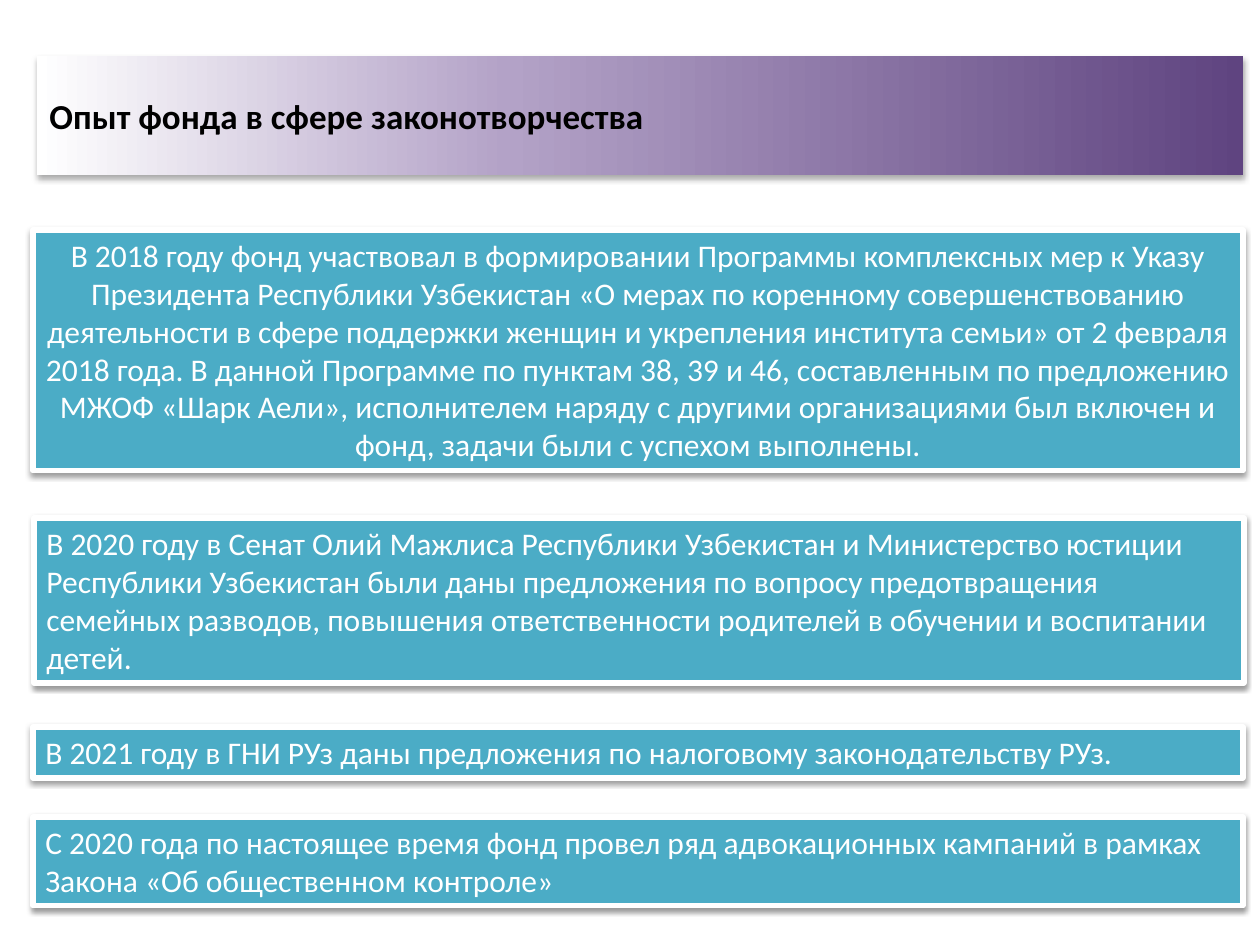
from dataclasses import dataclass

from lxml import etree
from pptx import Presentation
from pptx import util as u
from pptx.dml.color import RGBColor
from pptx.enum import shapes, text
from pptx.oxml import ns


@dataclass(frozen=True)
class Theme:
    font: str = "Calibri"
    title_size: int = 20
    body_size: int = 18
    ink: str = "000000"
    paper: str = "FFFFFF"
    panel: str = "4BACC6"
    banner: tuple = ((0, "5F4480"), (61, "B3A2C7"), (100, "FFFFFF"))
    border: int = 3
    # Shadows: opacity in percent, blur and distance in points
    banner_shadow: tuple = (32, 3.5, 2.2)
    panel_shadow: tuple = (38, 3.1, 1.6)


THEME = Theme()
PX = u.Inches(1) // 126
LEFT, ALIGN = text.PP_ALIGN.LEFT, text.PP_ALIGN

TITLE = "Опыт фонда в сфере законотворчества"
TITLE_AT = (37, 56, 1206, 119)

PANEL_WIDTH = 1210
# left, top, height, alignment, wording
PANELS = [
    (33, 230, 241, ALIGN.CENTER,
     "В 2018 году фонд участвовал в формировании Программы комплексных мер к Указу "
     "Президента Республики Узбекистан «О мерах по коренному совершенствованию "
     "деятельности в сфере поддержки женщин и укрепления института семьи» от 2 февраля "
     "2018 года. В данной Программе по пунктам 38, 39 и 46, составленным по предложению "
     "МЖОФ «Шарк Аели», исполнителем наряду с другими организациями был включен и "
     "фонд, задачи были с успехом выполнены."),
    (34, 518, 165, LEFT,
     "В 2020 году в Сенат Олий Мажлиса Республики Узбекистан и Министерство юстиции "
     "Республики Узбекистан были даны предложения по вопросу предотвращения "
     "семейных разводов, повышения ответственности родителей в обучении и воспитании "
     "детей."),
    (33, 727, 51, LEFT,
     "В 2021 году в ГНИ РУз даны предложения по налоговому законодательству РУз."),
    (33, 817, 89, LEFT,
     "С 2020 года по настоящее время фонд провел ряд адвокационных кампаний в рамках "
     "Закона «Об общественном контроле»"),
]


def rgb(value):
    return RGBColor.from_string(value)


def add_element(parent, tag, **attributes):
    values = {name: str(value) for name, value in attributes.items()}
    return etree.SubElement(parent, ns.qn(tag), values)


def add_shadow(shape, opacity, blur, distance):
    shape.shadow.inherit = False
    effects = shape.element.spPr.find(ns.qn("a:effectLst"))
    shadow = add_element(effects, "a:outerShdw", blurRad=u.Pt(blur), dist=u.Pt(distance),
                         dir=90 * 60000, rotWithShape=0)
    color = add_element(shadow, "a:srgbClr", val=THEME.ink)
    add_element(color, "a:alpha", val=opacity * 1000)


def fill_gradient(shape, stops):
    shape.fill.gradient()
    shape.fill.gradient_angle = 180
    stop_list = shape.element.spPr.find(".//" + ns.qn("a:gsLst"))
    stop_list.clear()
    for position, color in stops:
        stop = add_element(stop_list, "a:gs", pos=position * 1000)
        add_element(stop, "a:srgbClr", val=color)


def add_box(page, at, wording, size, color, align=LEFT, bold=False):
    box = page.shapes.add_shape(shapes.MSO_SHAPE.RECTANGLE, *(n * PX for n in at))
    frame = box.text_frame
    frame.word_wrap = True
    frame.text = wording
    para = frame.paragraphs[0]
    para.alignment = align
    font = para.runs[0].font
    font.name, font.size, font.bold = THEME.font, u.Pt(size), bold
    font.color.rgb = rgb(color)
    return box


def add_banner(page):
    box = add_box(page, TITLE_AT, TITLE, THEME.title_size, THEME.ink, bold=True)
    box.text_frame.vertical_anchor = text.MSO_ANCHOR.MIDDLE
    fill_gradient(box, THEME.banner)
    box.line.fill.background()
    add_shadow(box, *THEME.banner_shadow)


def add_panel(page, left, top, height, align, wording):
    box = add_box(page, (left, top, PANEL_WIDTH, height), wording,
                  THEME.body_size, THEME.paper, align)
    box.text_frame.vertical_anchor = text.MSO_ANCHOR.TOP
    box.text_frame.auto_size = text.MSO_AUTO_SIZE.SHAPE_TO_FIT_TEXT
    box.fill.solid()
    box.fill.fore_color.rgb = rgb(THEME.panel)
    box.line.color.rgb = rgb(THEME.paper)
    box.line.width = u.Pt(THEME.border)
    add_shadow(box, *THEME.panel_shadow)


def main():
    deck = Presentation()
    deck.slide_width, deck.slide_height = 1260 * PX, 945 * PX
    page = deck.slides.add_slide(deck.slide_layouts[6])
    add_banner(page)
    for panel in PANELS:
        add_panel(page, *panel)
    deck.save("out.pptx")


if __name__ == "__main__":
    main()
